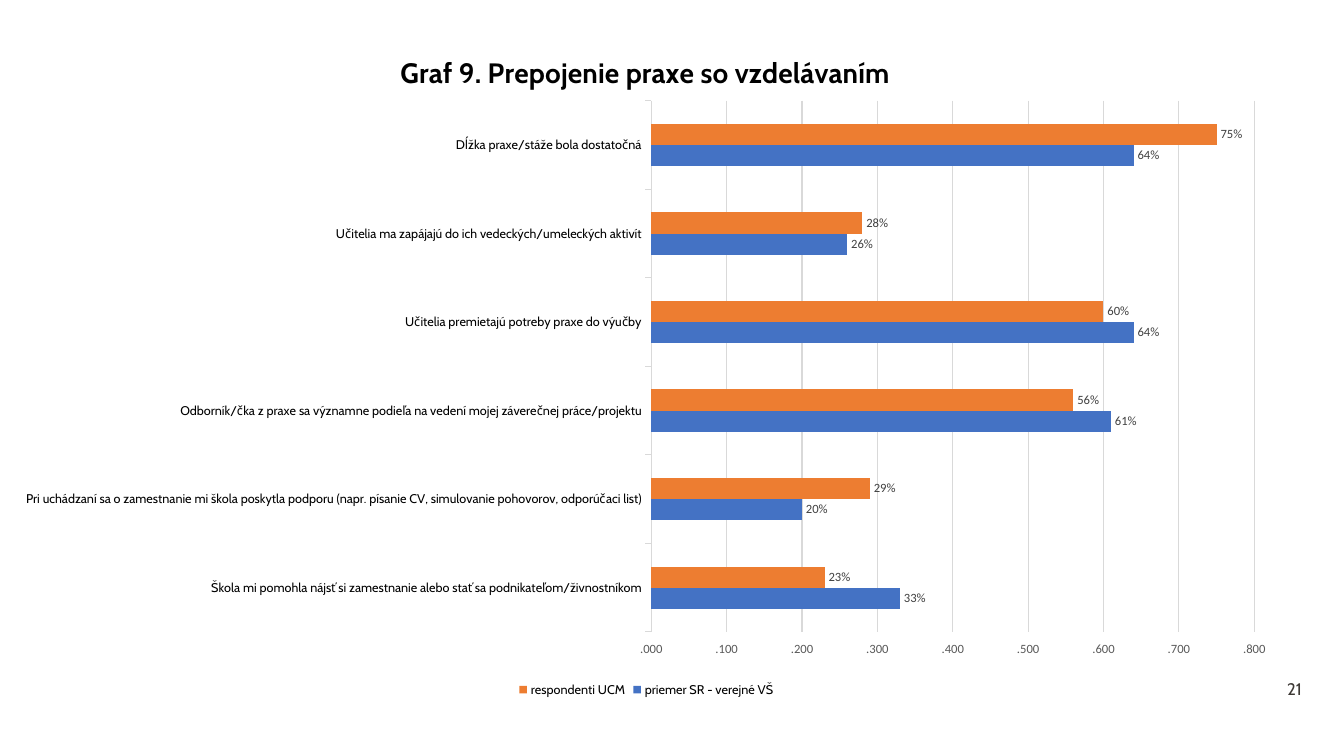
from lxml import etree
from pptx import Presentation
from pptx.chart.data import CategoryChartData
from pptx.dml.color import RGBColor
from pptx.enum.chart import XL_CHART_TYPE, XL_LABEL_POSITION, XL_LEGEND_POSITION, XL_TICK_MARK
from pptx.enum.text import MSO_ANCHOR, PP_ALIGN
from pptx.oxml import parse_xml
from pptx.oxml.ns import nsdecls
from pptx.util import Inches, Pt

CLUSTERED_BARS = XL_CHART_TYPE.BAR_CLUSTERED
OUTSIDE_END = XL_LABEL_POSITION.OUTSIDE_END
BOTTOM = XL_LEGEND_POSITION.BOTTOM
TICK_OUTSIDE = XL_TICK_MARK.OUTSIDE
MIDDLE = MSO_ANCHOR.MIDDLE
RIGHT = PP_ALIGN.RIGHT

BLACK = RGBColor(0x00, 0x00, 0x00)
BLUE = RGBColor(0x44, 0x72, 0xC4)
ORANGE = RGBColor(0xED, 0x7D, 0x31)
GRID_GRAY = RGBColor(0xD9, 0xD9, 0xD9)
AXIS_GRAY = RGBColor(0x59, 0x59, 0x59)
LABEL_GRAY = RGBColor(0x40, 0x40, 0x40)
PAGE_GRAY = RGBColor(0x3D, 0x39, 0x35)

TITLE = "Graf 9. Prepojenie praxe so vzdelávaním"
QUESTIONS = [
    "Škola mi pomohla nájsť si zamestnanie alebo stať sa podnikateľom/živnostníkom",
    "Pri uchádzaní sa o zamestnanie mi škola poskytla podporu "
    "(napr. písanie CV, simulovanie pohovorov, odporúčaci list)",
    "Odborník/čka z praxe sa významne podieľa na vedení mojej záverečnej práce/projektu",
    "Učitelia premietajú potreby praxe do výučby",
    "Učitelia ma zapájajú do ich vedeckých/umeleckých aktivít",
    "Dĺžka praxe/stáže bola dostatočná",
]
SERIES = [
    ("priemer SR - verejné VŠ", [0.33, 0.2, 0.61, 0.64, 0.26, 0.64], BLUE),
    ("respondenti UCM", [0.23, 0.29, 0.56, 0.6, 0.28, 0.75], ORANGE),
]


def style_font(font, name, size, color, bold=False):
    """Set the typeface, size, colour and weight of a font."""
    font.name, font.size, font.bold = name, Pt(size), bold
    font.color.rgb = color


def style_line(line):
    """Give an axis or gridline its thin grey stroke."""
    line.color.rgb = GRID_GRAY
    line.width = Pt(0.75)


def set_layout(element, position, **fractions):
    """Place a chart part by fractions of the chart's size."""
    for old in element.findall("{*}layout"):
        element.remove(old)
    target = '<c:layoutTarget val="inner"/>' if "w" in fractions else ""
    modes = "".join(f'<c:{key}Mode val="edge"/>' for key in "xy")
    values = "".join(f'<c:{key} val="{value:.4f}"/>' for key, value in fractions.items())
    layout = parse_xml(f'<c:layout {nsdecls("c")}><c:manualLayout>{target}{modes}{values}'
                       "</c:manualLayout></c:layout>")
    element.insert(position, layout)


def add_title(chart, width, height):
    """Write the chart title above the bars."""
    chart.has_title = True
    frame = chart.chart_title.text_frame
    frame.text = TITLE
    style_font(frame.paragraphs[0].font, "Cabin", 20, BLACK, True)
    chart.chart_title.include_in_layout = False
    set_layout(chart.chart_title._element, 1, x=3.92 / width, y=0.22 / height)


def style_axes(chart):
    """Format the question axis and the value axis with its gridlines."""
    questions, values = chart.category_axis, chart.value_axis
    questions.major_tick_mark = values.major_tick_mark = TICK_OUTSIDE
    style_font(questions.tick_labels.font, "Cabin", 9, BLACK)
    style_line(questions.format.line)
    values.minimum_scale, values.maximum_scale, values.major_unit = 0, 0.8, 0.1
    values.tick_labels.number_format = r"#.##0;\-#.##0"
    values.tick_labels.number_format_is_linked = False
    style_font(values.tick_labels.font, "Calibri", 9, AXIS_GRAY)
    values.format.line.fill.background()
    values.has_major_gridlines = True
    style_line(values.major_gridlines.format.line)


def style_bars(plot):
    """Colour each series and label its bars with percentages."""
    plot.gap_width, plot.overlap, plot.vary_by_categories = 219, 0, False
    for series, (_, _, color) in zip(plot.series, SERIES):
        series.format.fill.solid()
        series.format.fill.fore_color.rgb = color
        labels = series.data_labels
        labels.show_value = True
        labels.position = OUTSIDE_END
        labels.number_format, labels.number_format_is_linked = "0%", False
        style_font(labels.font, "Calibri", 9, LABEL_GRAY)


def add_survey_chart(slide, left, top, width, height):
    """Draw the bar chart of survey answers in the given box, in inches."""
    data = CategoryChartData(number_format="0.00")
    data.categories = QUESTIONS
    for name, values, _ in SERIES:
        data.add_series(name, values)
    chart = slide.shapes.add_chart(CLUSTERED_BARS, Inches(left), Inches(top),
                                   Inches(width), Inches(height), data).chart
    style_font(chart.font, "Calibri", 10, BLACK)
    add_title(chart, width, height)
    style_axes(chart)
    style_bars(chart.plots[0])
    chart.has_legend = True
    chart.legend.position = BOTTOM
    chart.legend.include_in_layout = False
    style_font(chart.legend.font, "Cabin", 9, BLACK)
    plot_area = chart.plots[0]._element.getparent()
    set_layout(plot_area, 0, x=6.46 / width, y=0.75 / height, w=5.98 / width, h=5.27 / height)


def add_page_number(slide, left, top, width, height):
    """Write the page number at the right of the given box, in inches."""
    box = slide.shapes.add_textbox(Inches(left), Inches(top), Inches(width), Inches(height))
    frame = box.text_frame
    frame.word_wrap = True
    frame.vertical_anchor = MIDDLE
    para = frame.paragraphs[0]
    para.text, para.alignment = "21", RIGHT
    style_font(para.font, "Cabin", 12, PAGE_GRAY)


def main():
    """Build the slide and save the deck."""
    deck = Presentation()
    deck.slide_width, deck.slide_height = Inches(13.33), Inches(7.5)
    slide = deck.slides.add_slide(deck.slide_layouts[6])
    add_page_number(slide, 12.25, 6.67, 0.76, 0.32)
    add_survey_chart(slide, 0, 0.25, 12.82, 6.71)
    deck.save("out.pptx")


if __name__ == "__main__":
    main()
